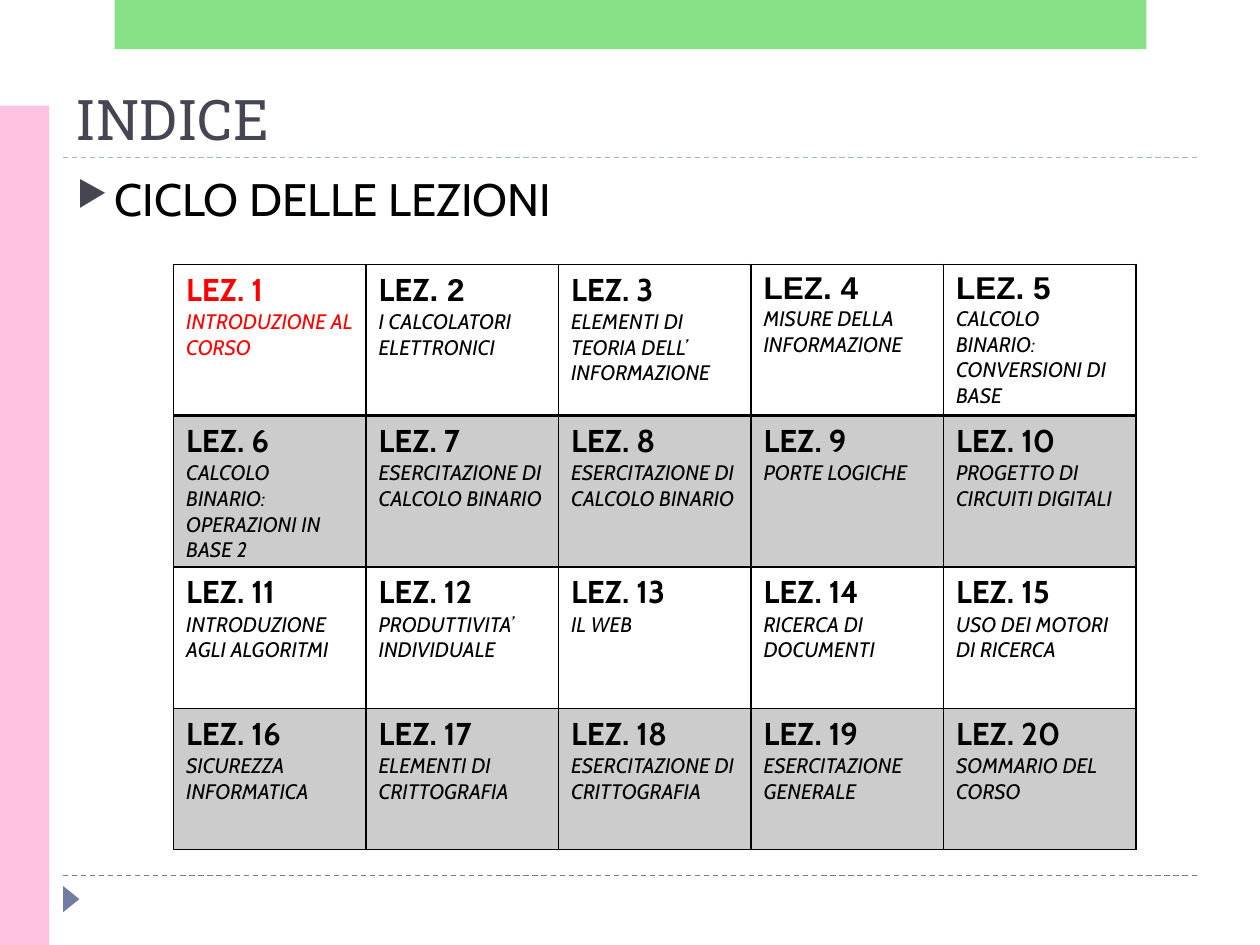
from pptx import Presentation
from pptx import util as u
from pptx.dml.color import RGBColor
from pptx.enum import dml, shapes, text
from pptx.oxml.ns import qn
from lxml import etree

BLACK = RGBColor(0x00, 0x00, 0x00)
RED = RGBColor(0xFF, 0x00, 0x00)
SLATE = RGBColor(0x46, 0x46, 0x53)
INDIGO = RGBColor(0x72, 0x7C, 0xA3)
PALE_BLUE = RGBColor(0x9F, 0xB8, 0xCD)
PINK = RGBColor(0xFF, 0xC1, 0xE0)
GREEN = RGBColor(0x62, 0xD8, 0x62)

TITLE_FONT, BODY_FONT, NUMBER_FONT = "Roboto Slab", "Cabin", "Arial"

COLUMNS = 5
LESSONS = [
    "INTRODUZIONE AL CORSO",
    "I CALCOLATORI\nELETTRONICI",
    "ELEMENTI DI TEORIA DELL’\nINFORMAZIONE",
    "MISURE DELLA INFORMAZIONE",
    "CALCOLO BINARIO: CONVERSIONI DI BASE",
    "CALCOLO BINARIO: OPERAZIONI IN BASE 2",
    "ESERCITAZIONE DI CALCOLO BINARIO",
    "ESERCITAZIONE DI CALCOLO BINARIO",
    "PORTE LOGICHE",
    "PROGETTO DI CIRCUITI DIGITALI",
    "INTRODUZIONE AGLI ALGORITMI",
    "PRODUTTIVITA’ INDIVIDUALE",
    "IL WEB",
    "RICERCA DI DOCUMENTI",
    "USO DEI MOTORI DI RICERCA",
    "SICUREZZA INFORMATICA",
    "ELEMENTI DI CRITTOGRAFIA",
    "ESERCITAZIONE DI CRITTOGRAFIA",
    "ESERCITAZIONE GENERALE",
    "SOMMARIO DEL CORSO",
]
# Lesson headings that are not wholly in the body font
HEADING_PARTS = {
    2: [("LEZ", BODY_FONT), (". 2", NUMBER_FONT)],
    4: [("LEZ. 4", NUMBER_FONT)],
    5: [("LEZ. 5", NUMBER_FONT)],
}


def write(paragraph, content, size, font=BODY_FONT, color=BLACK, bold=False, italic=False):
    """Add text to a paragraph; a newline becomes a line break."""
    for index, line in enumerate(content.split("\n")):
        if index:
            paragraph.add_line_break()
        run = paragraph.add_run()
        run.text = line
        run.font.size = u.Pt(size)
        run.font.name = font
        run.font.color.rgb = color
        run.font.bold = bold
        run.font.italic = italic


def set_fill(fill, color, opacity=100):
    fill.solid()
    fill.fore_color.rgb = color
    if opacity < 100:
        color_element = fill._xPr.find(qn("a:solidFill"))[0]
        etree.SubElement(color_element, qn("a:alpha"), val=str(opacity * 1000))


def add_block(slide, kind, box, color, opacity=100):
    shape = slide.shapes.add_shape(kind, *map(u.Cm, box))
    shape.shadow.inherit = False
    set_fill(shape.fill, color, opacity)
    shape.line.fill.background()
    return shape


def add_dashed_rule(slide, left, top, width, color):
    rule = slide.shapes.add_connector(
        shapes.MSO_CONNECTOR.STRAIGHT, u.Cm(left), u.Cm(top), u.Cm(left + width), u.Cm(top))
    rule.line.color.rgb = color
    rule.line.width = u.Pt(0.75)
    rule.line.dash_style = dml.MSO_LINE.DASH
    etree.SubElement(rule._element.spPr, qn("a:effectLst"))


def add_frame(slide, left, top, width, height):
    """Coloured bars, dashed rules and the corner marker."""
    for rule_top, color in ((17.65, INDIGO), (3.18, PALE_BLUE)):
        add_dashed_rule(slide, left + 1.27, top + rule_top, width - 2.54, color)
    marker = add_block(slide, shapes.MSO_SHAPE.ISOSCELES_TRIANGLE,
                       (left + 1.17, top + 17.96, 0.53, 0.33), INDIGO)
    marker.rotation = 90
    rectangle = shapes.MSO_SHAPE.RECTANGLE
    add_block(slide, rectangle, (left, top + 2.13, 0.99, height - 2.13), PINK)
    add_block(slide, rectangle, (left + 2.31, top, width - 4.6, 0.99), GREEN, 76)


def place_title(slide, left, top, width, height):
    title = slide.shapes.title
    title.left, title.top, title.width, title.height = map(u.Cm, (left, top, width, height))
    frame = title.text_frame
    frame.vertical_anchor = text.MSO_ANCHOR.BOTTOM
    frame.auto_size = text.MSO_AUTO_SIZE.NONE
    frame.paragraphs[0].alignment = text.PP_ALIGN.LEFT
    write(frame.paragraphs[0], "INDICE", 32, font=TITLE_FONT, color=SLATE)


def add_subject(slide, left, top, width, height):
    """Bulleted line above the table."""
    frame = slide.shapes.add_textbox(*map(u.Cm, (left, top, width, height))).text_frame
    frame.word_wrap = True
    paragraph = frame.paragraphs[0]
    properties = paragraph._p.get_or_add_pPr()
    properties.set("marL", str(u.Cm(0.76)))
    properties.set("indent", str(-u.Cm(0.76)))
    bullet_color = etree.SubElement(properties, qn("a:buClr"))
    etree.SubElement(bullet_color, qn("a:srgbClr"), val=str(SLATE))
    etree.SubElement(properties, qn("a:buSzPct"), val="76000")
    etree.SubElement(properties, qn("a:buChar"), char="▶")
    write(paragraph, "CICLO DELLE LEZIONI", 26)


def set_borders(cell, **widths):
    """Draw black borders, given as L, R, T and B widths in points."""
    properties = cell._tc.get_or_add_tcPr()
    for index, (side, width) in enumerate(widths.items()):
        line = etree.Element(qn(f"a:ln{side}"), w=str(u.Pt(width)))
        fill = etree.SubElement(line, qn("a:solidFill"))
        etree.SubElement(fill, qn("a:srgbClr"), val=str(BLACK))
        properties.insert(index, line)


def fill_lesson(cell, number, subject):
    color = RED if number == 1 else BLACK
    heading = cell.text_frame.paragraphs[0]
    for part, font in HEADING_PARTS.get(number, [(f"LEZ. {number}", BODY_FONT)]):
        write(heading, part, 18, font=font, color=color, bold=True)
    write(cell.text_frame.add_paragraph(), subject, 12, color=color, italic=True)


def add_lessons(slide, left, top, width, height):
    """Lesson grid with every second row shaded."""
    rows = len(LESSONS) // COLUMNS
    table = slide.shapes.add_table(
        rows, COLUMNS, *map(u.Cm, (left, top, width, height))).table
    table.first_row = table.horz_banding = False
    for column in table.columns:
        column.width = u.Cm(width / COLUMNS)
    for row in table.rows:
        row.height = u.Cm(height / rows)
    for index, subject in enumerate(LESSONS):
        row, column = divmod(index, COLUMNS)
        cell = table.cell(row, column)
        fill_lesson(cell, index + 1, subject)
        if row % 2:
            set_fill(cell.fill, BLACK, 20)
        else:
            cell.fill.background()
        set_borders(cell, L=1, R=1, T=2 if row == 1 else 1, B=2 if row == 0 else 1)


def main():
    presentation = Presentation()
    presentation.slide_width, presentation.slide_height = u.Cm(25.4), u.Cm(19.05)
    slide = presentation.slides.add_slide(presentation.slide_layouts.get_by_name("Title Only"))
    add_frame(slide, 0, 0, 25.4, 19.05)
    place_title(slide, 1.27, 1.4, 22.86, 1.78)
    add_subject(slide, 1.3, 3.33, 22.86, 2)
    add_lessons(slide, 3.5, 5.33, 19.4, 11.4)
    presentation.save("out.pptx")


if __name__ == "__main__":
    main()
